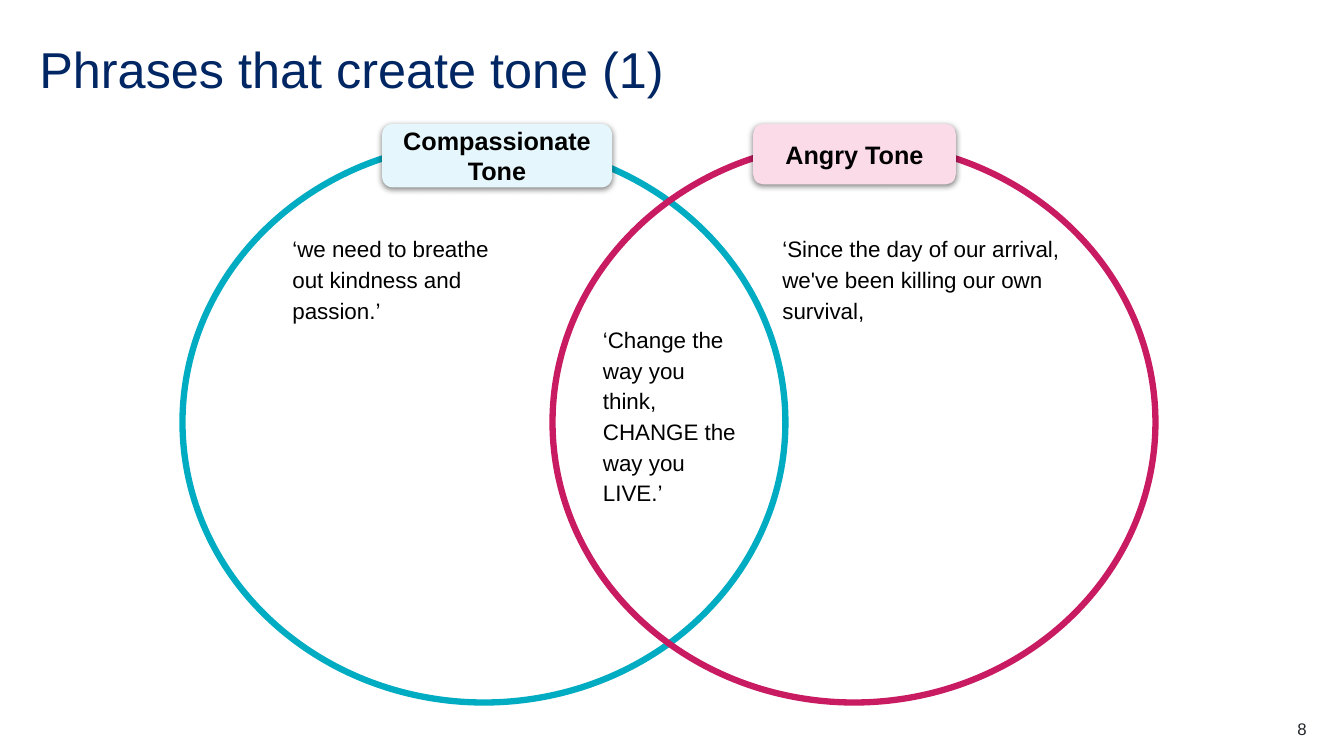
from lxml.etree import SubElement
from pptx import Presentation
from pptx.dml.color import RGBColor
from pptx.enum.shapes import MSO_SHAPE as Shape
from pptx.enum.text import MSO_ANCHOR as Anchor, MSO_AUTO_SIZE as AutoSize, PP_ALIGN as Align
from pptx.oxml.ns import qn
from pptx.util import Inches, Pt

THEME = {
    "font": "Arial",
    "title": {"size": 36, "color": "002664"},
    "label": {"size": 18, "color": "000000", "bold": True},
    "quote": {"size": 16, "color": "000000"},
    "number": {"size": 12, "color": "22272B"},
    "ring_width": 4.5,
    "shadow": "000000",
}

TITLE = "Phrases that create tone (1)"
PAGE_NUMBER = "8"
TONES = [
    {"label": "Compassionate Tone", "ring": "00ACC2", "tint": "E5F7FC",
     "left": 1.81, "label_box": (3.79, 1.23, 2.28, 0.63)},
    {"label": "Angry Tone", "ring": "C81B62", "tint": "FBDBE7",
     "left": 5.48, "label_box": (7.47, 1.23, 2.01, 0.6)},
]
QUOTES = [
    (["‘we need to breathe out kindness and passion.’"], (2.77, 2.17, 2.5, 1.02)),
    (["‘Since the day of our arrival, we've been killing our own", "survival,"],
     (7.63, 2.17, 3.11, 1)),
    (["‘Change the way you think, CHANGE the way you LIVE.’"], (5.85, 3.07, 1.65, 2.17)),
]
RING_TOP, RING_WIDTH, RING_HEIGHT = 1.41, 5.98, 5.56
TITLE_BOX = (0.39, 0.39, 12.56, 0.6)
NUMBER_BOX = (12.17, 7.13, 0.79, 0.2)


def inches(box):
    return [Inches(length) for length in box]


def write(frame, lines, style, margins=(0, 0), anchor=Anchor.TOP, **paragraph_format):
    across, down = inches(margins)
    frame_format = {
        "word_wrap": True, "auto_size": AutoSize.NONE, "vertical_anchor": anchor,
        "margin_left": across, "margin_right": across,
        "margin_top": down, "margin_bottom": down,
    }
    for key, value in frame_format.items():
        setattr(frame, key, value)
    frame.text = "\n".join(lines)
    font_format = {"name": THEME["font"], "size": Pt(style["size"]),
                   "bold": style.get("bold", False)}
    for paragraph in frame.paragraphs:
        for key, value in paragraph_format.items():
            setattr(paragraph, key, value)
        for run in paragraph.runs:
            for key, value in font_format.items():
                setattr(run.font, key, value)
            run.font.color.rgb = RGBColor.from_string(style["color"])


def add_shadow(label):
    effects = label._element.spPr.find(qn("a:effectLst"))
    shadow = SubElement(effects, qn("a:outerShdw"), blurRad=str(Pt(4.5)),
                        dist=str(Pt(1.5)), dir="5400000", algn="t", rotWithShape="0")
    color = SubElement(shadow, qn("a:srgbClr"), val=THEME["shadow"])
    SubElement(color, qn("a:alpha"), val="50000")


def add_tone(slide, tone):
    group = slide.shapes.add_group_shape()
    ring_box = (tone["left"], RING_TOP, RING_WIDTH, RING_HEIGHT)
    ring = group.shapes.add_shape(Shape.OVAL, *inches(ring_box))
    ring.shadow.inherit = False
    ring.fill.background()
    ring.line.color.rgb = RGBColor.from_string(tone["ring"])
    ring.line.width = Pt(THEME["ring_width"])

    label = group.shapes.add_shape(Shape.ROUNDED_RECTANGLE, *inches(tone["label_box"]))
    label.shadow.inherit = False
    label.fill.solid()
    label.fill.fore_color.rgb = RGBColor.from_string(tone["tint"])
    label.line.fill.background()
    add_shadow(label)
    write(label.text_frame, [tone["label"]], THEME["label"], (0.09, 0.04),
          Anchor.MIDDLE, alignment=Align.CENTER)


def main():
    deck = Presentation()
    deck.slide_width, deck.slide_height = Inches(13.33), Inches(7.5)
    slide = deck.slides.add_slide(deck.slide_layouts[5])

    title = slide.shapes.title
    title.left, title.top, title.width, title.height = inches(TITLE_BOX)
    write(title.text_frame, [TITLE], THEME["title"], anchor=Anchor.BOTTOM,
          alignment=Align.LEFT, line_spacing=0.9)

    for tone in TONES:
        add_tone(slide, tone)
    for lines, box in QUOTES:
        quote = slide.shapes.add_textbox(*inches(box))
        write(quote.text_frame, lines, THEME["quote"], (0.13, 0.13), line_spacing=1.14)

    number = slide.shapes.add_textbox(*inches(NUMBER_BOX))
    write(number.text_frame, [PAGE_NUMBER], THEME["number"], alignment=Align.RIGHT)
    deck.save("out.pptx")


if __name__ == "__main__":
    main()
